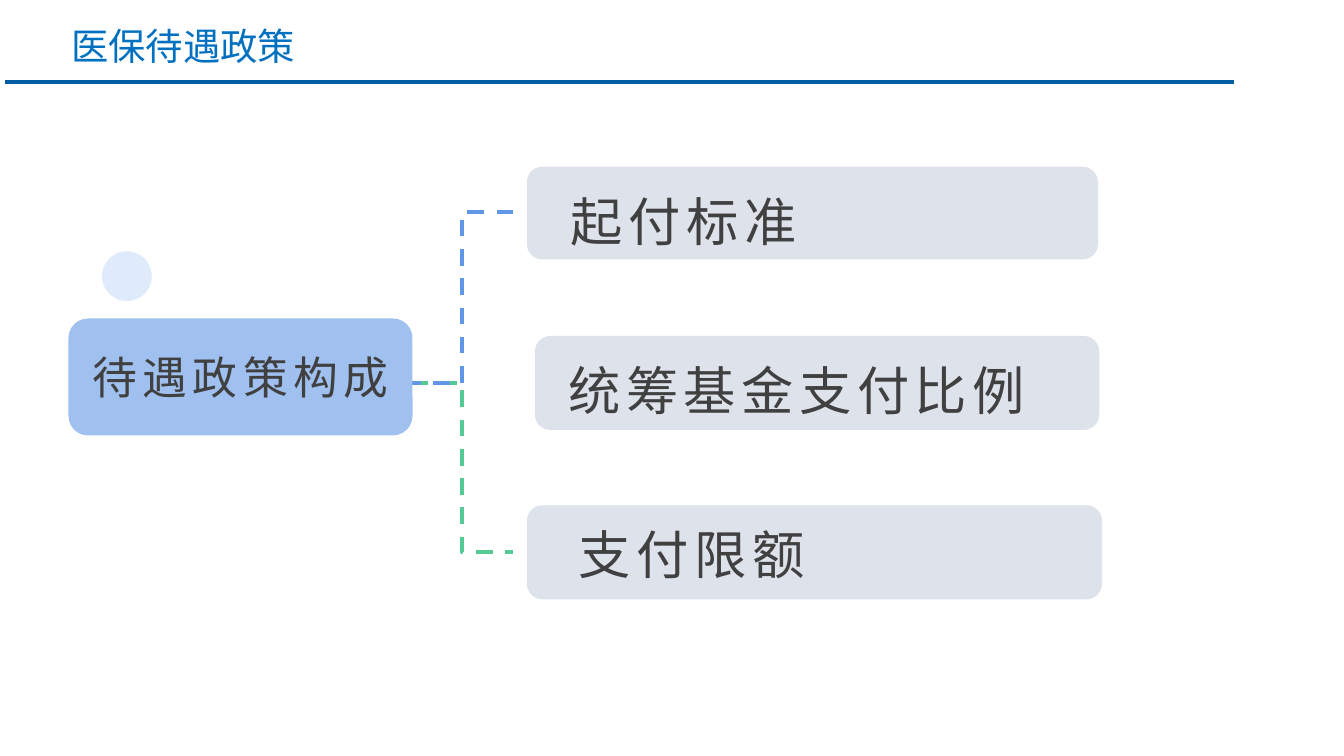
from lxml.etree import SubElement
from pptx import Presentation
from pptx.dml.color import RGBColor
from pptx.enum.dml import MSO_LINE
from pptx.enum.shapes import MSO_CONNECTOR, MSO_SHAPE
from pptx.enum.text import MSO_ANCHOR, PP_ALIGN
from pptx.oxml.ns import qn
from pptx.util import Inches, Pt

FONT = "Noto Sans CJK SC"
COLORS = {
    "title": "0070C0", "rule": "005DA2", "text": "404040", "branch": "DDE2EB",
    "root": "A0C0F0", "dot": "DFEAFA", "upper": "6096E6", "lower": "56CA95",
}

TITLE = "医保待遇政策"
ROOT = "待遇政策构成"
ROOT_BOX = (0.51, 2.37, 2.56, 0.87)
DOT_BOX = (0.76, 1.87, 0.37, 0.37)
# wording, box, text area
BRANCHES = [
    ("起付标准", (3.92, 1.24, 4.25, 0.69), (4.15, 1.36, 4.15, 0.39)),
    ("统筹基金支付比例", (3.98, 2.5, 4.2, 0.7), (4.13, 2.62, 4.09, 0.3)),
    ("支付限额", (3.92, 3.76, 4.28, 0.7), (4.21, 3.84, 4, 0.3)),
]
FORK_START = (3.06, 2.85)
FORK_UPPER = (3.82, 1.58)
FORK_LOWER = (3.82, 4.11)

SLIDE_WIDTH = 10
SLIDE_HEIGHT = SLIDE_WIDTH * 9 / 16

prs = Presentation()
prs.slide_width, prs.slide_height = Inches(SLIDE_WIDTH), Inches(SLIDE_HEIGHT)
slide = prs.slides.add_slide(prs.slide_layouts[6])


def inches(values):
    return [Inches(value) for value in values]


def rgb(name):
    return RGBColor.from_string(COLORS[name])


def write(shape, text, size, color="text", spacing=0, align=PP_ALIGN.LEFT,
          anchor=MSO_ANCHOR.TOP, bottom=0.05):
    frame = shape.text_frame
    frame.word_wrap = True
    frame.vertical_anchor = anchor
    frame.margin_bottom = Inches(bottom)
    paragraph = frame.paragraphs[0]
    paragraph.alignment = align
    run = paragraph.add_run()
    run.text = text
    run.font.size = Pt(size)
    run.font.color.rgb = rgb(color)
    run.font.name = FONT
    properties = run.font._element
    SubElement(properties, qn("a:ea"), typeface=FONT)
    if spacing:
        properties.set("spc", str(spacing * 100))


def add_filled(kind, box, color):
    shape = slide.shapes.add_shape(kind, *inches(box))
    shape.shadow.inherit = False
    shape.fill.solid()
    shape.fill.fore_color.rgb = rgb(color)
    shape.line.fill.background()
    return shape


def add_line(kind, start, end, color, width, dash=None):
    line = slide.shapes.add_connector(kind, *inches(start + end))
    line.line.color.rgb = rgb(color)
    line.line.width = Pt(width)
    if dash:
        line.line.dash_style = dash
    SubElement(line._element.spPr, qn("a:effectLst"))


add_line(MSO_CONNECTOR.STRAIGHT, (9.18, 0.61), (0.04, 0.61), "rule", 2)
title = slide.shapes.add_textbox(*inches((0.43, 0.12, 7.95, 0.44)))
write(title, TITLE, 20, color="title")

add_line(MSO_CONNECTOR.ELBOW, FORK_START, FORK_LOWER, "lower", 2.25, MSO_LINE.DASH)
add_line(MSO_CONNECTOR.ELBOW, FORK_UPPER, FORK_START, "upper", 2.25, MSO_LINE.DASH)

for wording, box, text_area in BRANCHES:
    add_filled(MSO_SHAPE.ROUNDED_RECTANGLE, box, "branch")
    label = slide.shapes.add_textbox(*inches(text_area))
    write(label, wording, 28, spacing=3, bottom=0)

root = add_filled(MSO_SHAPE.ROUNDED_RECTANGLE, ROOT_BOX, "root")
write(root, ROOT, 24, spacing=3, align=PP_ALIGN.CENTER, anchor=MSO_ANCHOR.MIDDLE)
add_filled(MSO_SHAPE.OVAL, DOT_BOX, "dot")

prs.save("out.pptx")
